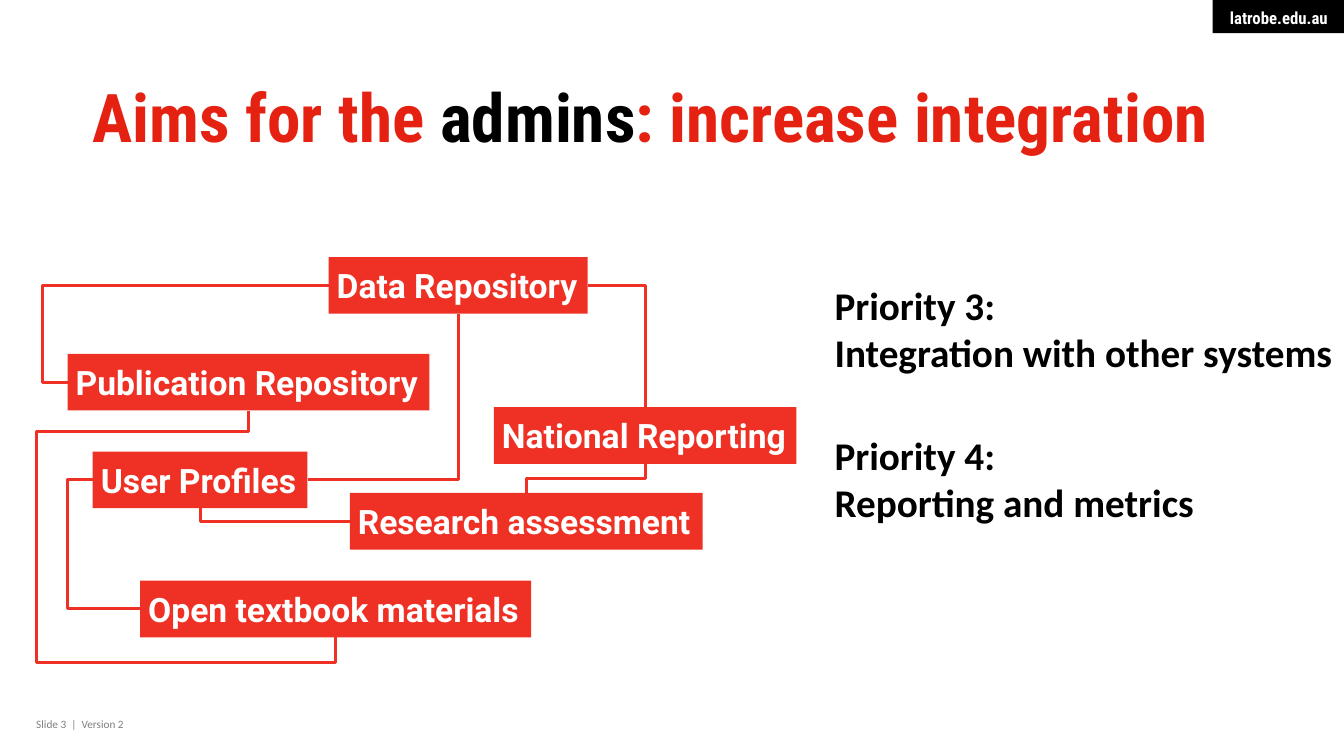
from dataclasses import dataclass, field
from typing import Any

from pptx import Presentation
from pptx import util as u
from pptx.dml import color
from pptx.enum import shapes, text
from pptx.oxml import ns
from lxml import etree

SLIDE_WIDTH, SLIDE_HEIGHT = u.Inches(13.333), u.Inches(7.5)
COLOURS = {
    "red": "EE3124",
    "title_red": "E52212",
    "black": "000000",
    "white": "FFFFFF",
    "grey": "7F7F7F",
}
TOP, LEFT, BOTTOM, RIGHT = range(4)
SIDES = ("left", "top", "right", "bottom")
SYSTEM_HEIGHT = 7.5

Run = tuple[str, str]


@dataclass(frozen=True)
class Style:
    font: str
    size: float
    bold: bool = True
    insets: tuple[float, ...] = (0, 0.05, 0.1, 0.05)
    wrap: bool = True
    auto_size: Any = text.MSO_AUTO_SIZE.SHAPE_TO_FIT_TEXT
    paragraph: dict[str, Any] = field(default_factory=dict)


@dataclass(frozen=True)
class Block:
    """Left, top, width and height are percentages of the slide."""
    area: tuple[float, float, float, float]
    lines: list[list[Run]]
    style: Style
    fill: str | None = None


@dataclass(frozen=True)
class System:
    name: str
    left: float
    top: float
    width: float


@dataclass(frozen=True)
class Link:
    start: str
    start_side: int
    end: str
    end_side: int
    rotation: int
    flips: str
    bends: tuple[float, ...] = ()


TITLE = Style("Roboto Condensed", 48, insets=(0, 0, 0, 0),
              auto_size=text.MSO_AUTO_SIZE.NONE,
              paragraph={"line_spacing": u.Pt(55)})
TAG = Style("Roboto Condensed", 12, insets=(0.16, 0.08, 0.16, 0.05), wrap=False,
            paragraph={"alignment": text.PP_ALIGN.RIGHT})
FOOTER = Style("Calibri", 8, bold=False)
PRIORITY = Style("Calibri", 28)
SYSTEM = Style("Roboto", 24, insets=(0.08,) * 4, wrap=False,
               paragraph={"space_after": u.Pt(6)})

HEADING = Block((6.9, 10.4, 89.78, 19.33),
                [[("Aims for the ", "title_red"), ("admins", "black"),
                  (": increase integration", "title_red")]], TITLE)
BLOCKS = [
    Block((90.23, 0, 9.77, 4.4), [[("latrobe.edu.au", "white")]], TAG, "black"),
    Block((2.7, 94.27, 20.18, 3.2), [[("Slide 3  |  Version 2", "grey")]], FOOTER),
    Block((62.1, 36.53, 37.9, 13.87),
          [[("Priority 3:", "black")], [("Integration with other systems", "black")]],
          PRIORITY, "white"),
    Block((62.1, 56.4, 32.85, 13.87),
          [[("Priority 4:", "black")], [("Reporting and metrics", "black")]],
          PRIORITY, "white"),
]
SYSTEMS = [
    System("Publication Repository", 5.03, 46.8, 26.93),
    System("Data Repository", 24.45, 34, 19.28),
    System("User Profiles", 6.9, 59.73, 15.98),
    System("National Reporting", 36.75, 53.87, 22.5),
    System("Open textbook materials", 10.43, 76.8, 29.1),
    System("Research assessment", 26.03, 65.2, 26.25),
]
LINKS = [
    Link("Data Repository", LEFT, "Publication Repository", LEFT, 180, "V", (1.097,)),
    Link("Data Repository", RIGHT, "National Reporting", TOP, 0, ""),
    Link("Data Repository", BOTTOM, "User Profiles", RIGHT, 90, ""),
    Link("Research assessment", TOP, "National Reporting", BOTTOM, 90, "HV", (0.5,)),
    Link("User Profiles", BOTTOM, "Research assessment", LEFT, 270, "H"),
    Link("User Profiles", LEFT, "Open textbook materials", LEFT, 180, "HV", (-0.532,)),
    Link("Publication Repository", BOTTOM, "Open textbook materials", BOTTOM,
         270, "H", (0.091, -2.433, 1.111)),
]


def rgb(name: str) -> color.RGBColor:
    return color.RGBColor.from_string(COLOURS[name])


def apply(target: Any, values: dict[str, Any]) -> None:
    for name, value in values.items():
        setattr(target, name, value)


def frame(area: tuple[float, ...]) -> dict[str, int]:
    extents = (SLIDE_WIDTH, SLIDE_HEIGHT) * 2
    names = ("left", "top", "width", "height")
    return {name: round(extent * share / 100)
            for name, extent, share in zip(names, extents, area)}


def write(shape: Any, block: Block) -> None:
    style = block.style
    text_frame = shape.text_frame
    margins = {f"margin_{side}": u.Inches(inset)
               for side, inset in zip(SIDES, style.insets)}
    apply(text_frame, margins | {"word_wrap": style.wrap, "auto_size": style.auto_size,
                                 "vertical_anchor": text.MSO_ANCHOR.TOP})
    for index, line in enumerate(block.lines):
        paragraph = text_frame.paragraphs[0] if index == 0 else text_frame.add_paragraph()
        apply(paragraph, {"alignment": text.PP_ALIGN.LEFT} | style.paragraph)
        for words, colour in line:
            run = paragraph.add_run()
            run.text = words
            apply(run.font, {"name": style.font, "size": u.Pt(style.size),
                             "bold": style.bold})
            run.font.color.rgb = rgb(colour)


def draw_block(slide: Any, block: Block) -> Any:
    area = frame(block.area)
    if block.fill is None:
        shape = slide.shapes.add_textbox(**area)
    else:
        shape = slide.shapes.add_shape(shapes.MSO_SHAPE.RECTANGLE, **area)
        shape.shadow.inherit = False
        shape.fill.solid()
        shape.fill.fore_color.rgb = rgb(block.fill)
        shape.line.fill.background()
    write(shape, block)
    return shape


def draw_link(slide: Any, link: Link, boxes: dict[str, Any]) -> None:
    connector = slide.shapes.add_connector(shapes.MSO_CONNECTOR.ELBOW, 0, 0, 0, 0)
    connector.begin_connect(boxes[link.start], link.start_side)
    connector.end_connect(boxes[link.end], link.end_side)
    centre_x = (connector.begin_x + connector.end_x) // 2
    centre_y = (connector.begin_y + connector.end_y) // 2
    width, height = connector.width, connector.height
    if link.rotation % 180:
        width, height = height, width
    apply(connector, {"left": centre_x - width // 2, "top": centre_y - height // 2,
                      "width": width, "height": height})
    connector.line.color.rgb = rgb("red")
    connector.line.width = u.Pt(2.25)

    properties = connector._element.spPr
    transform = properties.find(ns.qn("a:xfrm"))
    transform.set("rot", str(link.rotation * 60000))
    for axis in "HV":
        transform.set(f"flip{axis}", str(int(axis in link.flips)))
    geometry = properties.find(ns.qn("a:prstGeom"))
    geometry.set("prst", f"bentConnector{len(link.bends) + 2}")
    adjustments = geometry.find(ns.qn("a:avLst"))
    for number, bend in enumerate(link.bends, 1):
        guide = etree.SubElement(adjustments, ns.qn("a:gd"))
        guide.set("name", f"adj{number}")
        guide.set("fmla", f"val {round(bend * 100000)}")
    etree.SubElement(properties, ns.qn("a:effectLst"))


def main() -> None:
    presentation = Presentation()
    apply(presentation, {"slide_width": SLIDE_WIDTH, "slide_height": SLIDE_HEIGHT})
    slide = presentation.slides.add_slide(presentation.slide_layouts[5])
    title = slide.shapes.title
    apply(title, frame(HEADING.area))
    write(title, HEADING)
    for block in BLOCKS:
        draw_block(slide, block)
    boxes = {}
    for system in SYSTEMS:
        area = (system.left, system.top, system.width, SYSTEM_HEIGHT)
        boxes[system.name] = draw_block(
            slide, Block(area, [[(system.name, "white")]], SYSTEM, "red"))
    for link in LINKS:
        draw_link(slide, link, boxes)
    presentation.save("out.pptx")


if __name__ == "__main__":
    main()
